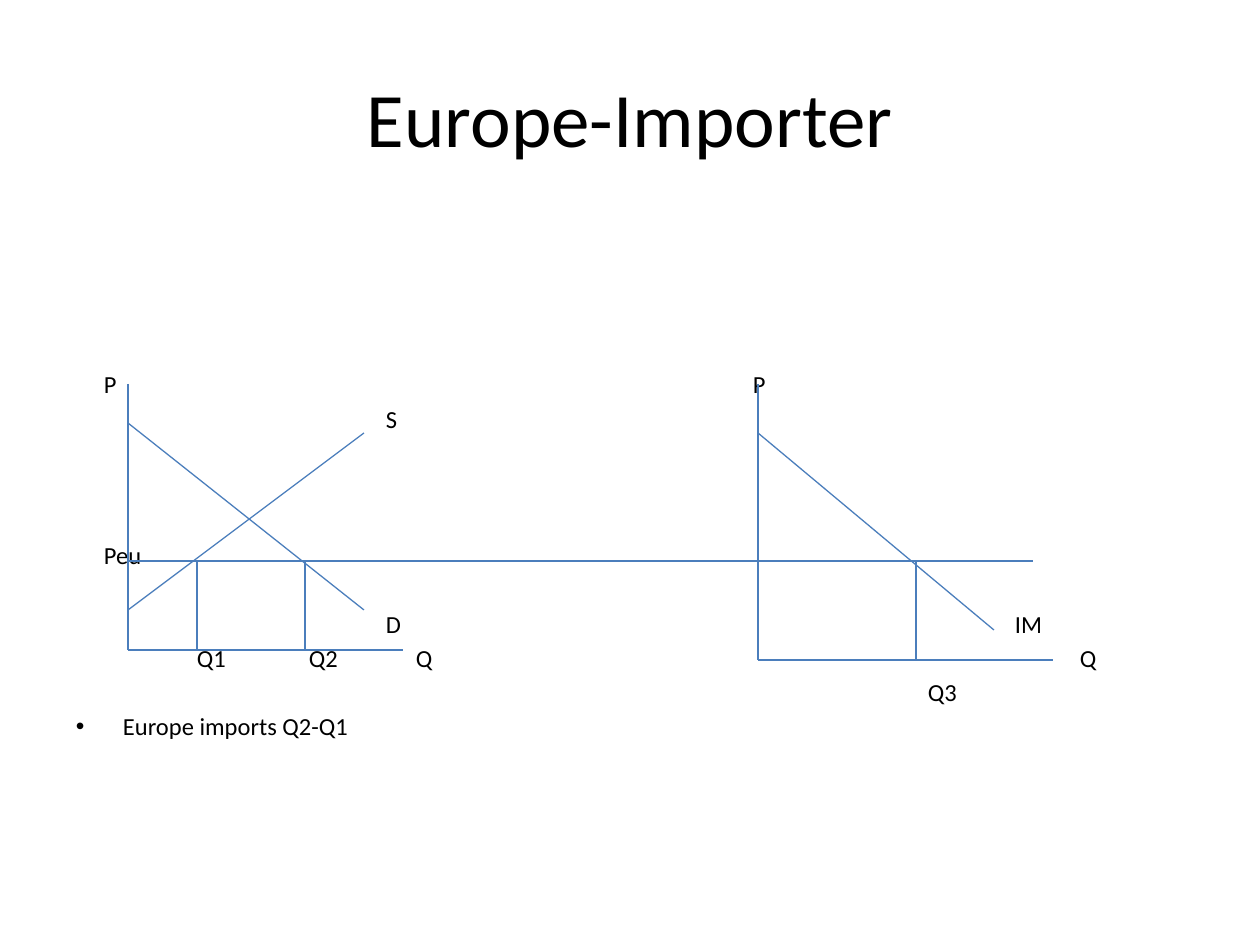
from lxml import etree
from pptx import Presentation
from pptx.dml.color import RGBColor
from pptx.enum.shapes import MSO_CONNECTOR
from pptx.enum.text import MSO_ANCHOR, PP_ALIGN
from pptx.oxml.ns import qn
from pptx.util import Pt

STRAIGHT = MSO_CONNECTOR.STRAIGHT
MIDDLE = MSO_ANCHOR.MIDDLE
CENTER = PP_ALIGN.CENTER
LEFT = PP_ALIGN.LEFT
EMU_PER_PX = 914400 / 126
BLACK, BLUE = "000000", "4B7EBC"


def px(*lengths):
    return [round(length * EMU_PER_PX) for length in lengths]


def write(shape, text, size, align):
    frame = shape.text_frame
    frame.text = text
    frame.word_wrap = True
    frame.vertical_anchor = MIDDLE
    para = frame.paragraphs[0]
    para.alignment = align
    font = para.runs[0].font
    font.name, font.size = "Calibri", Pt(size)
    font.color.rgb = RGBColor.from_string(BLACK)
    return para


deck = Presentation()
deck.slide_width, deck.slide_height = px(1260, 945)
page = deck.slides.add_slide(deck.slide_layouts[5])

# Title
title = page.shapes.title
title.left, title.top, title.width, title.height = px(63, 38, 1134, 158)
write(title, "Europe-Importer", 44, CENTER)

# Labels: text, left edge and text row; the last one is the bulleted note
FIRST_ROW, ROW_PITCH, ROW_HEIGHT = 369, 34.2, 30
labels = [
    ("P", 104, 0), ("P", 753, 0), ("S", 386, 1), ("Peu", 104, 5),
    ("D", 386, 7), ("IM", 1015, 7),
    ("Q1", 197, 8), ("Q2", 309, 8), ("Q", 416, 8), ("Q", 1080, 8),
    ("Q3", 928, 9), ("Europe imports Q2-Q1", 76, 10),
]
for text, left, row in labels:
    width = 60 if len(text) < 4 else 400
    box = page.shapes.add_textbox(
        *px(left, FIRST_ROW + row * ROW_PITCH, width, ROW_HEIGHT))
    frame = box.text_frame
    frame.margin_left = frame.margin_right = 0
    frame.margin_top = frame.margin_bottom = 0
    para = write(box, text, 14, LEFT)

# Bullet on the note
indent = px(47)[0]
properties = para._p.get_or_add_pPr()
properties.set("marL", str(indent))
properties.set("indent", str(-indent))
etree.SubElement(properties, qn("a:buFont"), typeface="Arial")
etree.SubElement(properties, qn("a:buChar"), char="•")

# Axes, curves and guides: x1, y1, x2, y2
HOME_X, TRADE_X = 128, 758
AXIS_TOP, HOME_BASE, TRADE_BASE = 384, 650, 660
PRICE = 561
lines = [
    (HOME_X, AXIS_TOP, HOME_X, HOME_BASE),
    (HOME_X, HOME_BASE, 403, HOME_BASE),
    (TRADE_X, AXIS_TOP, TRADE_X, TRADE_BASE),
    (TRADE_X, TRADE_BASE, 1053, TRADE_BASE),
    (HOME_X, 610, 364, 433),      # supply
    (HOME_X, 423, 364, 610),      # demand
    (HOME_X, PRICE, 1033, PRICE),  # price in Europe
    (TRADE_X, 433, 994, 630),     # import demand
    (197, PRICE, 197, HOME_BASE),
    (305, PRICE, 305, HOME_BASE),
    (916, PRICE, 916, TRADE_BASE),
]
for ends in lines:
    line = page.shapes.add_connector(STRAIGHT, *px(*ends))
    line.line.color.rgb = RGBColor.from_string(BLUE)
    line.line.width = Pt(0.75)
    etree.SubElement(line._element.spPr, qn("a:effectLst"))

deck.save("out.pptx")
